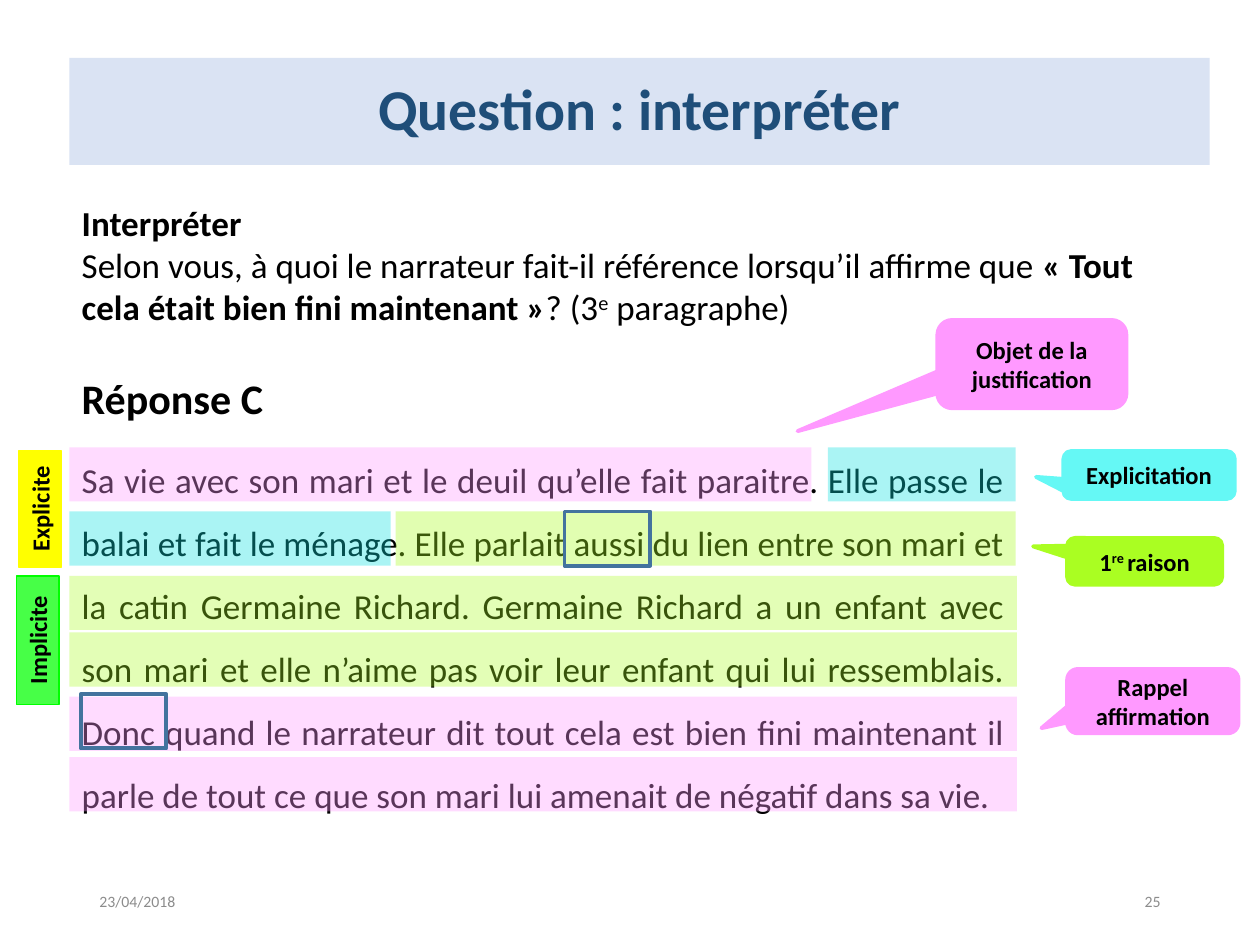
from pptx import Presentation
from pptx.dml.color import RGBColor as Rgb
from pptx.enum.shapes import MSO_SHAPE as Shape
from pptx.enum.text import MSO_ANCHOR as Anchor, MSO_AUTO_SIZE as AutoSize, PP_ALIGN as Align
from pptx.oxml.ns import qn
from pptx.util import Pt
from lxml import etree

SCALE = 9144  # EMU per px, 100 px to the inch

THEME = {
    "font": "Calibri",
    "title": "1F4E79", "title_fill": "DAE3F3", "text": "000000", "footer": "8C8C8C",
    "pink": "FF99FF", "teal": "0EE2E2", "cyan": "65F8F5", "lime": "AAFE22",
    "green": "00FF00", "yellow": "FFFF00", "frame": "43739E",
    "title_size": 33, "heading_size": 24, "body_size": 20, "label_size": 14, "footer_size": 9,
}


def write(box, paragraphs, size, color="text", anchor=Anchor.TOP, **para_format):
    """Each paragraph is a list of (text, style); style holds b (bold) and s (superscript)."""
    frame = box.text_frame
    for name, value in {"word_wrap": True, "auto_size": AutoSize.NONE,
                        "vertical_anchor": anchor}.items():
        setattr(frame, name, value)
    for index, pieces in enumerate(paragraphs):
        para = frame.paragraphs[0] if index == 0 else frame.add_paragraph()
        for name, value in para_format.items():
            setattr(para, name, value)
        for text, style in pieces:
            span = para.add_run()
            span.text = text
            for name, value in {"name": THEME["font"], "size": Pt(THEME[size]),
                                "bold": "b" in style}.items():
                setattr(span.font, name, value)
            span.font.color.rgb = Rgb.from_string(THEME[color])
            if "s" in style:
                span.font._element.set("baseline", "30000")
    return frame


def add_block(page, kind, place, fill=None, alpha=100, line=None, width=2.25):
    block = page.shapes.add_shape(kind, *(v * SCALE for v in place))
    block.shadow.inherit = False
    if fill:
        block.fill.solid()
        block.fill.fore_color.rgb = Rgb.from_string(THEME[fill])
        if alpha < 100:
            color = block._element.spPr.find(qn("a:solidFill"))[0]
            etree.SubElement(color, qn("a:alpha")).set("val", str(alpha * 1000))
    else:
        block.fill.background()
    if line:
        block.line.color.rgb = Rgb.from_string(THEME[line])
        block.line.width = Pt(width)
    else:
        block.line.fill.background()
    return block


deck = Presentation()
deck.slide_width, deck.slide_height = 1000 * SCALE, 750 * SCALE
page = deck.slides.add_slide(deck.slide_layouts[5])

# Title band
title = page.shapes.title
for name, value in {"left": 55, "top": 46, "width": 905, "height": 85}.items():
    setattr(title, name, value * SCALE)
title.fill.solid()
title.fill.fore_color.rgb = Rgb.from_string(THEME["title_fill"])
write(title, [[("Question : interpréter", "b")]], "title_size", "title", Anchor.MIDDLE,
      alignment=Align.CENTER, line_spacing=0.9)

# Date and page number
for left, text, align in ((69, "23/04/2018", Align.LEFT), (706, "25", Align.RIGHT)):
    box = page.shapes.add_textbox(*(v * SCALE for v in (left, 695, 225, 40)))
    write(box, [[(text, "")]], "footer_size", "footer", Anchor.MIDDLE, alignment=align)

# Question
box = page.shapes.add_textbox(*(v * SCALE for v in (55, 155, 905, 111)))
write(box, [
    [("Interpréter", "b")],
    [("Selon vous, à quoi le narrateur fait-il référence lorsqu’il affirme que ", ""),
     ("« Tout cela était bien fini maintenant »", "b"),
     ("? (3", ""), ("e", "s"), (" paragraphe)", "")],
], "body_size")

# Answer: a larger heading over a justified paragraph
answer = (
    "Sa vie avec son mari et le deuil qu’elle fait paraitre. Elle passe le balai et fait "
    "le ménage. Elle parlait aussi du lien entre son mari et la catin Germaine Richard. "
    "Germaine Richard a un enfant avec son mari et elle n’aime pas voir leur enfant qui lui "
    "ressemblais. Donc quand le narrateur dit tout cela est bien fini maintenant il parle de "
    "tout ce que son mari lui amenait de négatif dans sa vie."
)
box = page.shapes.add_textbox(*(v * SCALE for v in (55, 271, 752, 385)))
frame = write(box, [[("Réponse C", "b")], [(answer, "")]], "body_size",
              line_spacing=1.5, space_after=Pt(8))
heading, body = frame.paragraphs
heading.runs[0].font.size = Pt(THEME["heading_size"])
body.alignment = Align.JUSTIFY

# Highlighter bands over the answer's lines
BAND_HEIGHT = 43
for left, top, width, fill, alpha in (
    (55, 355, 589, "pink", 35),
    (657, 355, 149, "teal", 35),
    (55, 406, 255, "teal", 35),
    (55, 553, 752, "pink", 35),
    (55, 601, 752, "pink", 35),
    (55, 457, 752, "lime", 33),
    (55, 502, 752, "lime", 33),
    (314, 406, 492, "lime", 35),
):
    add_block(page, Shape.RECTANGLE, (left, top, width, BAND_HEIGHT), fill, alpha)

# Callouts, each with the tip of its pointer relative to its centre
for place, tip, fill, pieces in (
    ((744, 254, 150, 70), (-1.24, 0.76), "pink", [("Objet de la justification", "b")]),
    ((844, 358, 136, 38), (-0.66, 0.04), "cyan", [("Explicitation", "b")]),
    ((847, 427, 123, 37), (-0.72, -0.32), "lime", [("1", "b"), ("re ", "bs"), ("raison", "b")]),
    ((847, 531, 136, 51), (-0.65, 0.42), "pink", [("Rappel affirmation", "b")]),
):
    callout = add_block(page, Shape.ROUNDED_RECTANGULAR_CALLOUT, place, fill, line=fill)
    callout.adjustments[0], callout.adjustments[1] = tip
    write(callout, [pieces], "label_size", anchor=Anchor.MIDDLE, alignment=Align.CENTER)

# Vertical labels
for place, fill, alpha, text in (
    ((-21, 491, 102, 34), "green", 72, "Implicite"),
    ((-14, 387, 92, 34), "yellow", 100, "Explicite"),
):
    label = add_block(page, Shape.RECTANGLE, place, fill, alpha, line=fill, width=0.75)
    label.rotation = 270
    write(label, [[(text, "b")]], "label_size", alignment=Align.CENTER)

# Frames around the linking words
for left, top in ((448, 406), (64, 551)):
    add_block(page, Shape.RECTANGLE, (left, top, 68, BAND_HEIGHT), line="frame")

deck.save("out.pptx")
